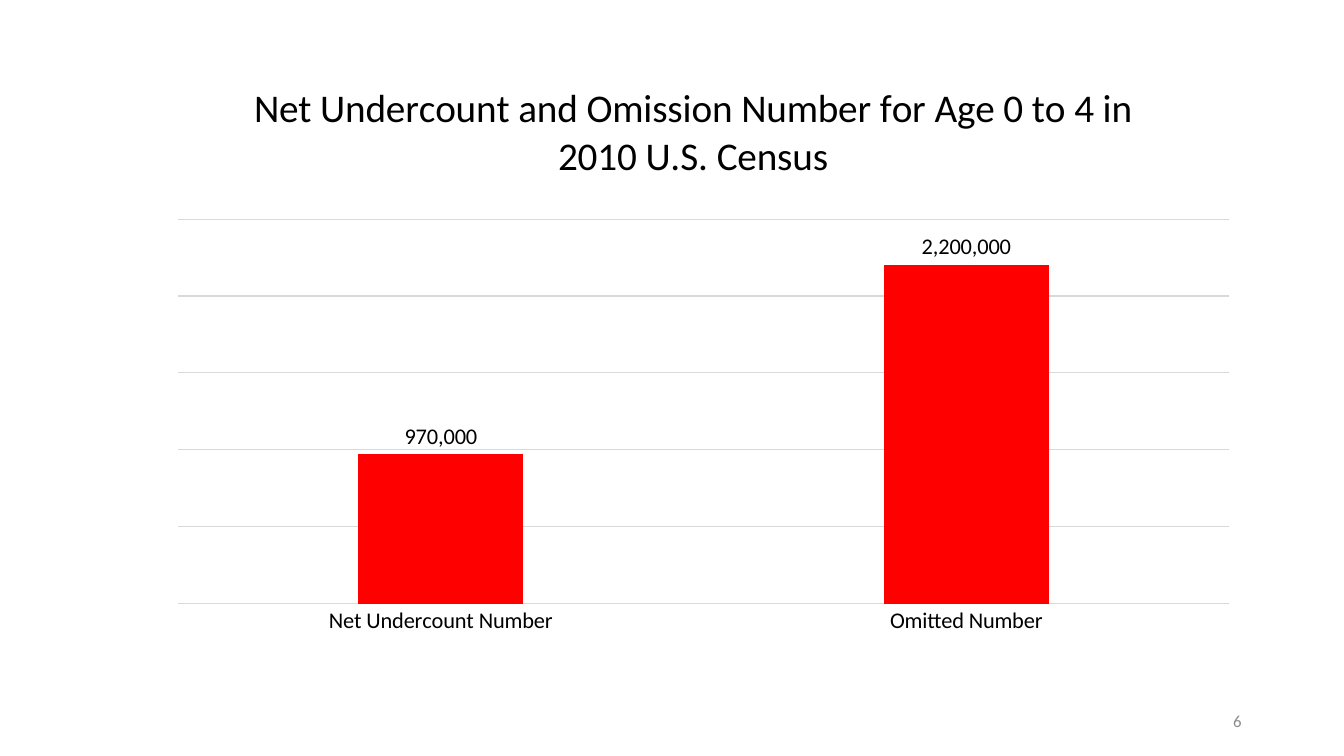
from dataclasses import dataclass

import pptx
import pptx.chart.data
import pptx.dml.color
import pptx.enum.chart
import pptx.enum.text
import pptx.oxml
import pptx.oxml.ns
import pptx.util

EMU_PER_PX = 9525


@dataclass(frozen=True)
class Theme:
    font: str = "Calibri"
    ink: str = "000000"
    muted: str = "8C8C8C"
    grid: str = "D9D9D9"
    bar: str = "FF0000"
    title_size: int = 28
    label_size: int = 16
    number_size: int = 12
    hairline: float = 0.75


def px(*lengths):
    return [pptx.util.Emu(length * EMU_PER_PX) for length in lengths]


def color(code):
    return pptx.dml.color.RGBColor.from_string(code)


def style_font(font, name, size, ink):
    font.name = name
    font.size = pptx.util.Pt(size)
    font.bold = False
    font.color.rgb = color(ink)


def write(frame, text, *, font, size, ink, align):
    """Fill a text frame with one formatted paragraph."""
    para = frame.paragraphs[0]
    para.alignment = align
    span = para.add_run()
    span.text = text
    style_font(span.font, font, size, ink)


class SlideBuilder:
    def __init__(self, page, theme):
        self.page = page
        self.theme = theme

    def text(self, text, bounds, *, size, ink, align):
        box = self.page.shapes.add_textbox(*px(*bounds))
        frame = box.text_frame
        frame.word_wrap = True
        frame.vertical_anchor = pptx.enum.text.MSO_ANCHOR.MIDDLE
        write(frame, text, font=self.theme.font, size=size, ink=ink, align=align)

    def column_chart(self, title, values, bounds, *, top, step):
        data = pptx.chart.data.CategoryChartData(number_format="#,##0")
        data.categories = list(values)
        data.add_series("Series 1", list(values.values()))
        kind = pptx.enum.chart.XL_CHART_TYPE.COLUMN_CLUSTERED
        chart = self.page.shapes.add_chart(kind, *px(*bounds), data).chart
        chart.has_legend = False
        style_font(chart.font, self.theme.font, self.theme.label_size, self.theme.ink)

        # Title
        chart.has_title = True
        write(chart.chart_title.text_frame, title, font=self.theme.font,
              size=self.theme.title_size, ink=self.theme.ink,
              align=pptx.enum.text.PP_ALIGN.CENTER)
        chart.chart_title.include_in_layout = False
        self.place(chart.chart_title._element.get_or_add_layout()
                   if hasattr(chart.chart_title._element, "get_or_add_layout")
                   else self.new_layout(chart.chart_title._element, 1),
                   x=0.11, y=0.05)

        # Axes
        none = pptx.enum.chart.XL_TICK_MARK.NONE
        categories = chart.category_axis
        categories.major_tick_mark = none
        self.line(categories.format.line)
        style_font(categories.tick_labels.font, self.theme.font,
                   self.theme.label_size, self.theme.ink)
        scale = chart.value_axis
        scale.minimum_scale, scale.maximum_scale, scale.major_unit = 0, top, step
        scale.has_major_gridlines = True
        self.line(scale.major_gridlines.format.line)
        scale.visible = False

        # Bars and their labels
        plot = chart.plots[0]
        plot.vary_by_categories = False
        plot.gap_width, plot.overlap = 219, -27
        fill = plot.series[0].format.fill
        fill.solid()
        fill.fore_color.rgb = color(self.theme.bar)
        plot.has_data_labels = True
        labels = plot.data_labels
        labels.show_value = True
        labels.position = pptx.enum.chart.XL_LABEL_POSITION.OUTSIDE_END
        labels.number_format = "#,##0"
        labels.number_format_is_linked = False
        style_font(labels.font, self.theme.font, self.theme.label_size, self.theme.ink)

        # Plot area
        area = chart._chartSpace.chart.plotArea
        for layout in area.findall(pptx.oxml.ns.qn("c:layout")):
            area.remove(layout)
        self.place(self.new_layout(area, 0), inner=True, x=0.04, y=0.264, w=0.939, h=0.625)

    def line(self, line):
        line.color.rgb = color(self.theme.grid)
        line.width = pptx.util.Pt(self.theme.hairline)

    @staticmethod
    def new_layout(parent, index):
        layout = pptx.oxml.parse_xml(f"<c:layout {pptx.oxml.ns.nsdecls('c')}/>")
        parent.insert(index, layout)
        return layout

    @staticmethod
    def place(layout, inner=False, **fractions):
        """Set a manual layout from fractions of the chart size."""
        target = '<c:layoutTarget val="inner"/>' if inner else ""
        modes = "".join(f'<c:{key}Mode val="edge"/>' for key in "xy")
        sizes = "".join(f'<c:{key} val="{value}"/>' for key, value in fractions.items())
        layout.append(pptx.oxml.parse_xml(
            f"<c:manualLayout {pptx.oxml.ns.nsdecls('c')}>{target}{modes}{sizes}"
            "</c:manualLayout>"))


def main():
    deck = pptx.Presentation()
    deck.slide_width, deck.slide_height = px(1280, 720)
    theme = Theme()
    builder = SlideBuilder(deck.slides.add_slide(deck.slide_layouts[6]), theme)

    # Slide number
    builder.text("6", (904, 667, 288, 38), size=theme.number_size, ink=theme.muted,
                 align=pptx.enum.text.PP_ALIGN.RIGHT)

    # Undercount chart
    builder.column_chart(
        "Net Undercount and Omission Number for Age 0 to 4 in 2010 U.S. Census",
        {"Net Undercount Number": 970000, "Omitted Number": 2200000},
        (127, 54, 1066, 586), top=2500000, step=500000)

    deck.save("out.pptx")


if __name__ == "__main__":
    main()
